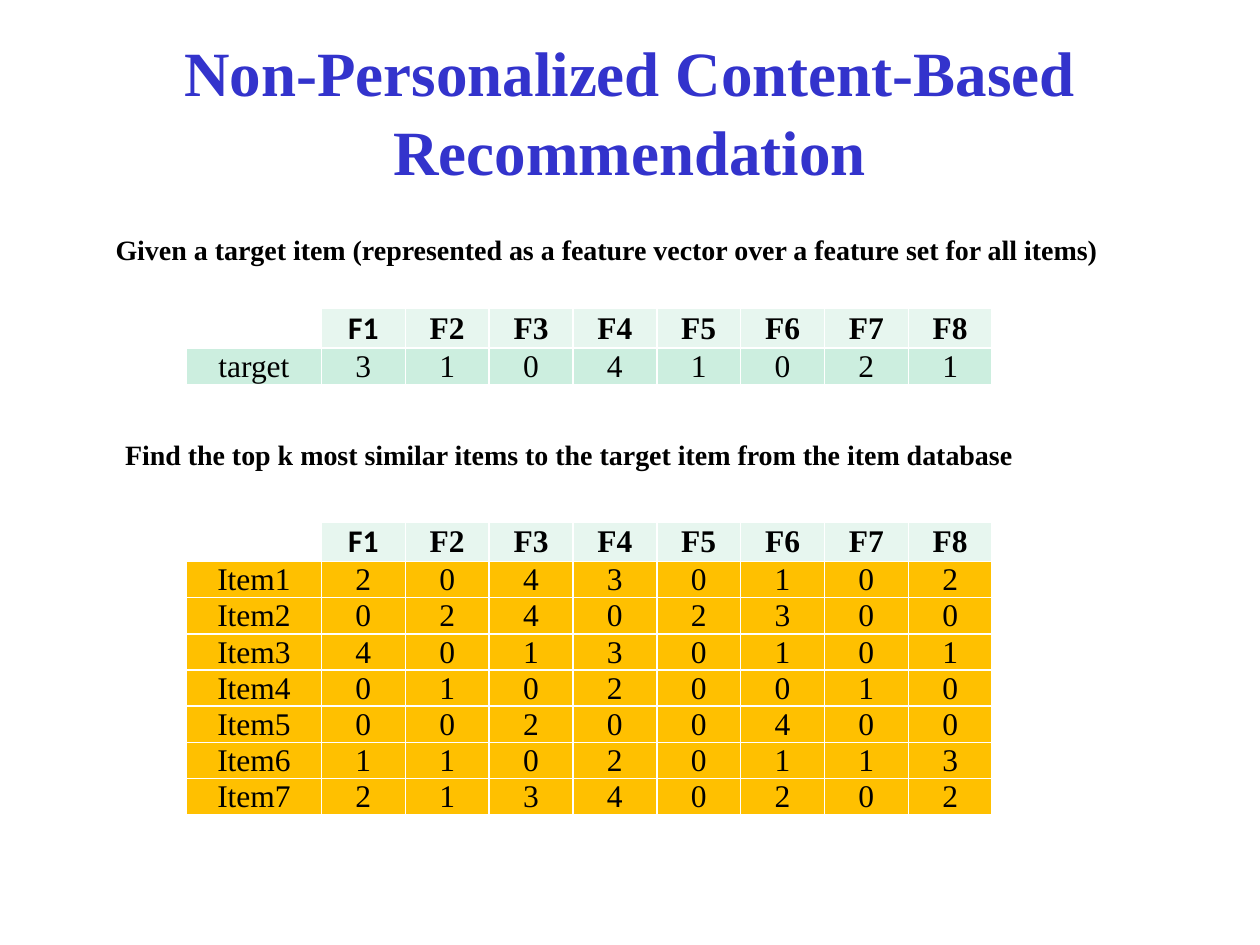
"""Build the slide on non-personalized content-based recommendation."""
from dataclasses import dataclass

from lxml import etree
from pptx import Presentation
from pptx.dml.color import RGBColor
from pptx.enum.text import MSO_ANCHOR, MSO_AUTO_SIZE, PP_ALIGN
from pptx.oxml.ns import qn
from pptx.util import Cm, Pt

MIDDLE, TOP = MSO_ANCHOR.MIDDLE, MSO_ANCHOR.TOP
CENTER, RIGHT = PP_ALIGN.CENTER, PP_ALIGN.RIGHT
GROW, FIXED = MSO_AUTO_SIZE.SHAPE_TO_FIT_TEXT, MSO_AUTO_SIZE.NONE


@dataclass(frozen=True)
class Theme:
    serif: str = "Times New Roman"
    sans: str = "Calibri"
    title: str = "3333CC"
    ink: str = "000000"
    white: str = "FFFFFF"
    head: str = "E7F6EF"
    mint: str = "CCEEDF"
    gold: str = "FFC000"
    title_size: int = 36
    note_size: int = 16
    cell_size: int = 18
    rule: int = 1


@dataclass(frozen=True)
class Label:
    text: str
    left: float
    top: float
    width: float
    height: float
    size: int
    color: str
    align: PP_ALIGN
    anchor: MSO_ANCHOR
    wrap: bool
    spacing: float = 1.0


@dataclass(frozen=True)
class Grid:
    top: float
    fill: str
    rows: dict[str, str]


THEME = Theme()
LEFT, NAME_WIDTH, COL_WIDTH = 3.76, 2.72, 1.69
HEAD_HEIGHT, ROW_HEIGHT, INSET = 0.79, 0.73, 0.02
HEADS = ["", *(f"F{n}" for n in range(1, 9))]

TITLE = Label("Non-Personalized Content-Based Recommendation", 1.9, 1.14, 21.59, 2.11,
              THEME.title_size, THEME.title, CENTER, MIDDLE, True, 1.05)
NOTES = [
    Label(text, left, top, width, 0.94, THEME.note_size, THEME.ink, RIGHT, TOP, False)
    for text, left, top, width in (
        ("Given a target item (represented as a feature vector over a feature set for all items)",
         1.78, 4.57, 20.6),
        ("Find the top k most similar items to the target item from the item database",
         1.98, 8.69, 18.69),
    )
]
GRIDS = [
    Grid(10.52, THEME.gold, {
        "Item1": "20430102",
        "Item2": "02402300",
        "Item3": "40130101",
        "Item4": "01020010",
        "Item5": "00200400",
        "Item6": "11020113",
        "Item7": "21340202",
    }),
    Grid(6.22, THEME.mint, {"target": "31041021"}),
]


def style(frame, size: int, color: str, align: PP_ALIGN, bold: bool, face: str) -> None:
    """Format every run of a text frame."""
    for para in frame.paragraphs:
        para.alignment = align
        for run in para.runs:
            font = run.font
            font.name, font.size, font.bold = face, Pt(size), bold
            font.color.rgb = RGBColor.from_string(color)


def draw_label(slide, label: Label) -> None:
    """Draw one bold text box."""
    box = slide.shapes.add_textbox(Cm(label.left), Cm(label.top),
                                   Cm(label.width), Cm(label.height))
    frame = box.text_frame
    frame.text = label.text
    frame.word_wrap = label.wrap
    frame.auto_size = FIXED if label.wrap else GROW
    frame.vertical_anchor = label.anchor
    frame.paragraphs[0].line_spacing = label.spacing
    style(frame, label.size, label.color, label.align, True, THEME.serif)


def rule_cell(cell) -> None:
    """Put a thin white line on all four sides of a cell."""
    props = cell._tc.get_or_add_tcPr()
    for spot, side in enumerate(("a:lnL", "a:lnR", "a:lnT", "a:lnB")):
        line = etree.Element(qn(side), w=str(Pt(THEME.rule)))
        fill = etree.SubElement(line, qn("a:solidFill"))
        etree.SubElement(fill, qn("a:srgbClr"), val=THEME.white)
        props.insert(spot, line)


def draw_cell(cell, text: str, fill: str, bold: bool, face: str) -> None:
    """Fill, rule and letter one table cell."""
    cell.fill.solid()
    cell.fill.fore_color.rgb = RGBColor.from_string(fill)
    cell.margin_left = cell.margin_right = cell.margin_top = Cm(INSET)
    cell.margin_bottom = Cm(0)
    cell.vertical_anchor = MIDDLE
    cell.text_frame.text = text
    style(cell.text_frame, THEME.cell_size, THEME.ink, CENTER, bold, face)
    rule_cell(cell)


def draw_grid(slide, grid: Grid) -> None:
    """Draw a feature table with its header row."""
    lines = [HEADS, *([name, *marks] for name, marks in grid.rows.items())]
    widths = [NAME_WIDTH] + [COL_WIDTH] * (len(HEADS) - 1)
    heights = [HEAD_HEIGHT] + [ROW_HEIGHT] * len(grid.rows)
    table = slide.shapes.add_table(len(lines), len(HEADS), Cm(LEFT), Cm(grid.top),
                                   Cm(sum(widths)), Cm(sum(heights))).table
    table.first_row = table.horz_banding = False
    for col, width in zip(table.columns, widths):
        col.width = Cm(width)
    for row, height in zip(table.rows, heights):
        row.height = Cm(height)
    for r, line in enumerate(lines):
        for c, text in enumerate(line):
            top = r == 0
            fill = grid.fill if not top else THEME.head if text else THEME.white
            face = THEME.sans if text == "F1" else THEME.serif
            draw_cell(table.cell(r, c), text, fill, top, face)


def main() -> None:
    """Build and save the deck."""
    deck = Presentation()
    deck.slide_width, deck.slide_height = Cm(25.4), Cm(19.05)
    slide = deck.slides.add_slide(deck.slide_layouts[6])
    draw_label(slide, TITLE)
    for grid in GRIDS:
        draw_grid(slide, grid)
    for note in NOTES:
        draw_label(slide, note)
    deck.save("out.pptx")


if __name__ == "__main__":
    main()
